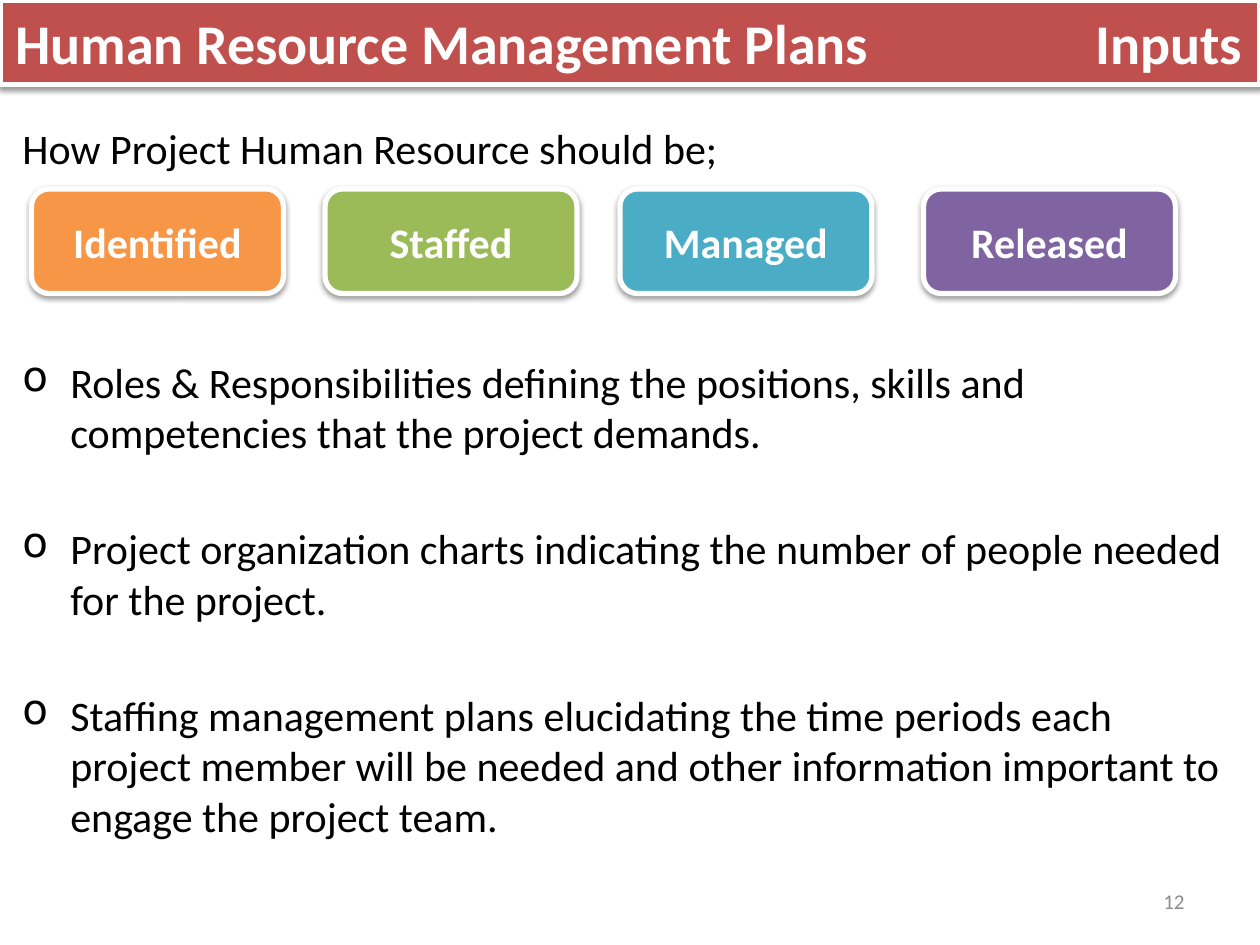
from lxml.etree import SubElement
from pptx import Presentation
from pptx.dml.color import RGBColor
from pptx.enum.shapes import MSO_SHAPE
from pptx.enum.text import MSO_ANCHOR, PP_ALIGN
from pptx.oxml.ns import qn
from pptx.util import Inches, Pt

FONT = "Calibri"
CARDS = [
    ("Identified", "F79646", 0.25),
    ("Staffed", "9BBB59", 2.58),
    ("Managed", "4BACC6", 4.92),
    ("Released", "8064A2", 7.33),
]
INTRO = "How Project Human Resource should be;"
BULLETS = [
    "Roles & Responsibilities defining the positions, skills and competencies that the project demands.",
    "Project organization charts indicating the number of people needed for the project.",
    "Staffing management plans elucidating the time periods each project member will be needed "
    "and other information important to engage the project team.",
]


def color(hex_string):
    return RGBColor.from_string(hex_string)


def style_para(para, size, hex_color, bold=False, align=PP_ALIGN.LEFT):
    para.alignment = align
    for span in para.runs:
        span.font.name = FONT
        span.font.size = Pt(size)
        span.font.bold = bold
        span.font.color.rgb = color(hex_color)


def add_shadow(shape):
    shape.shadow.inherit = False
    effects = shape._element.spPr.find(qn("a:effectLst"))
    shadow = SubElement(effects, qn("a:outerShdw"), blurRad=str(Pt(3.1)), dist=str(Pt(1.6)),
                        dir="5400000", rotWithShape="0")
    black = SubElement(shadow, qn("a:srgbClr"), val="000000")
    SubElement(black, qn("a:alpha"), val="38000")


def add_panel(page, preset, box, fill, text, size, align=PP_ALIGN.CENTER):
    """Filled shape with a white border, a soft shadow and bold white text."""
    shape = page.shapes.add_shape(preset, *map(Inches, box))
    shape.fill.solid()
    shape.fill.fore_color.rgb = color(fill)
    shape.line.color.rgb = color("FFFFFF")
    shape.line.width = Pt(3)
    add_shadow(shape)
    frame = shape.text_frame
    frame.text = text
    frame.vertical_anchor = MSO_ANCHOR.MIDDLE
    style_para(frame.paragraphs[0], size, "FFFFFF", True, align)
    return shape


def add_text_box(page, box):
    frame = page.shapes.add_textbox(*map(Inches, box)).text_frame
    frame.word_wrap = True
    return frame


def add_header(page, box):
    header = add_panel(page, MSO_SHAPE.RECTANGLE, box, "C0504D",
                       "Human Resource Management Plans\tInputs", 32, PP_ALIGN.LEFT)
    header.text_frame.margin_left = Inches(0.12)
    # Right tab stop pushes the section name to the far edge
    properties = header.text_frame.paragraphs[0]._p.get_or_add_pPr()
    tabs = SubElement(properties, qn("a:tabLst"))
    SubElement(tabs, qn("a:tab"), pos=str(Inches(box[2] - 0.26)), algn="r")


def add_body(page, box):
    frame = add_text_box(page, box)
    frame.text = INTRO
    style_para(frame.paragraphs[0], 24, "000000")
    for index, text in enumerate(BULLETS):
        para = frame.add_paragraph()
        para.text = text
        style_para(para, 24, "000000")
        # The first bullet leaves room for the row of cards
        para.space_before = Pt(37.6 if index else 105)
        properties = para._p.get_or_add_pPr()
        properties.set("marL", str(Inches(0.38)))
        properties.set("indent", str(Inches(-0.38)))
        SubElement(properties, qn("a:buChar"), char="o")


def add_cards(page, top, width, height):
    for label, fill, left in CARDS:
        add_panel(page, MSO_SHAPE.ROUNDED_RECTANGLE, (left, top, width, height), fill, label, 24)


def add_page_number(page, box):
    frame = add_text_box(page, box)
    frame.text = "12"
    frame.vertical_anchor = MSO_ANCHOR.MIDDLE
    style_para(frame.paragraphs[0], 12, "8C8C8C", align=PP_ALIGN.RIGHT)


def main():
    deck = Presentation()
    deck.slide_width, deck.slide_height = Inches(10), Inches(7.5)
    page = deck.slides.add_slide(deck.slide_layouts[6])
    add_header(page, (0, 0, 10, 0.67))
    add_body(page, (0.08, 0.92, 9.75, 6.5))
    add_cards(page, 1.5, 2, 0.83)
    add_page_number(page, (7.17, 6.95, 2.33, 0.4))
    deck.save("out.pptx")


if __name__ == "__main__":
    main()
